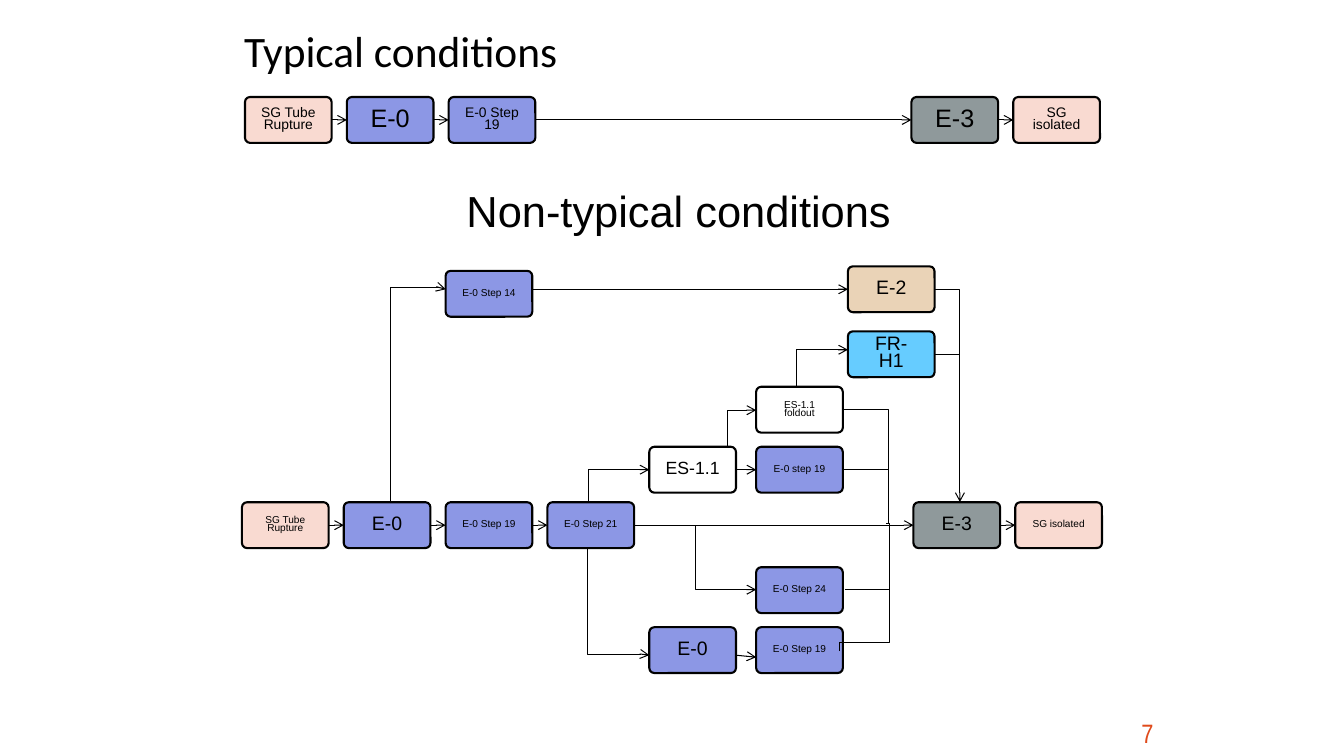
import itertools
from dataclasses import dataclass
from typing import NamedTuple

import lxml.etree
import pptx
import pptx.dml.color
import pptx.enum.shapes
import pptx.enum.text
import pptx.oxml.ns
import pptx.util

COLS, ROWS = 133.3, 75
CELL = pptx.util.Inches(0.1)
BOX_W, BOX_H, PITCH = 8.6, 4.55, 10.1
TYPICAL_X, START_X, BRANCH_X, STEP_X, EXIT_X, END_X = 24.3, 24, 64.4, 75, 84.1, 90.6
TYPICAL_Y, ESCAPE_Y, MAIN_Y = 11.9, 28.7, 52.1
LEFT, RIGHT = 1, 3
BLACK, WHITE, BLUE, PINK, GREY = "000000", "FFFFFF", "8C97E5", "F9DAD1", "8F999B"
SMALL, LARGE = 7.2, 13.9
ALIGN = pptx.enum.text.PP_ALIGN
ANCHOR = pptx.enum.text.MSO_ANCHOR
KIND = pptx.enum.shapes.MSO_CONNECTOR
qn = pptx.oxml.ns.qn


@dataclass(frozen=True)
class Box:
    key: str
    text: str
    col: float
    mid_row: float
    fill: str = BLUE
    size: float = SMALL
    inset: float = 1.35
    spacing: float = 0.7


class Point(NamedTuple):
    col: float
    row: float


class Port(NamedTuple):
    key: str
    side: int


@dataclass(frozen=True)
class Line:
    start: Point | Port
    end: Point | Port
    arrow: bool = True


@dataclass(frozen=True)
class Elbow:
    start: Point
    end: Point
    bends: tuple
    upright: bool = False
    arrow: bool = True


BOXES = [
    Box("typical rupture", "SG Tube Rupture", TYPICAL_X, TYPICAL_Y, PINK, 9.9, 1),
    Box("typical E-0", "E-0", TYPICAL_X + PITCH, TYPICAL_Y, BLUE, 18, 1, 0.8),
    Box("typical step 19", "E-0 Step 19", TYPICAL_X + 2 * PITCH, TYPICAL_Y, BLUE, 9.9, 1),
    Box("typical E-3", "E-3", 90.4, TYPICAL_Y, GREY, 18, 1, 0.8),
    Box("typical isolated", "SG isolated", 90.4 + PITCH, TYPICAL_Y, PINK, 9.9, 1),
    Box("rupture", "SG Tube Rupture", START_X, MAIN_Y, PINK),
    Box("E-0", "E-0", START_X + PITCH, MAIN_Y, size=LARGE),
    Box("step 19", "E-0 Step 19", START_X + 2 * PITCH, MAIN_Y),
    Box("step 21", "E-0 Step 21", START_X + 3 * PITCH, MAIN_Y),
    Box("E-3", "E-3", END_X, MAIN_Y, GREY, LARGE),
    Box("isolated", "SG isolated", END_X + PITCH, MAIN_Y, PINK),
    Box("step 14", "E-0 Step 14", START_X + 2 * PITCH, 29.15),
    Box("E-2", "E-2", EXIT_X, ESCAPE_Y, "EAD3B7", LARGE),
    Box("FR-H1", "FR-H1", EXIT_X, 35.15, "66CCFF", LARGE),
    Box("foldout", "ES-1.1 foldout", STEP_X, 40.65, WHITE),
    Box("ES-1.1", "ES-1.1", BRANCH_X, 46.6, WHITE, 12.6),
    Box("ES step 19", "E-0 step 19", STEP_X, 46.6),
    Box("step 24", "E-0 Step 24", STEP_X, 58.55),
    Box("lower E-0", "E-0", BRANCH_X, 64.5, size=LARGE),
    Box("lower step 19", "E-0 Step 19", STEP_X, 64.5),
]

CHAINS = [
    ("typical rupture", "typical E-0", "typical step 19", "typical E-3", "typical isolated"),
    ("rupture", "E-0", "step 19", "step 21", "E-3", "isolated"),
    ("ES-1.1", "ES step 19"),
]

LINES = [
    Line(Point(52.8, ESCAPE_Y), Port("E-2", LEFT)),
    Line(Port("FR-H1", RIGHT), Point(95.2, 35.15), False),
    Line(Port("ES step 19", RIGHT), Point(88.1, 46.6), False),
    Line(Point(83.8, 58.5), Point(88.3, 58.5), False),
    Line(Point(73, 65), Point(75, 65.2)),
]

ELBOWS = [
    Elbow(Point(58.3, 49.8), Point(64.4, 46.6), (0.01,)),
    Elbow(Point(69.4, 44.3), Point(75, 40.7), (0.5,)),
    Elbow(Point(79, 38.4), Point(84.1, 34.7), (0,)),
    Elbow(Point(62.9, 52.1), Point(75, 58.5), (0.5,)),
    Elbow(Point(58.3, 54.4), Point(64.4, 65), (0.99,), True),
    Elbow(Point(38.7, 49.8), Point(44.2, 28.7), (1.01,), True),
    Elbow(Point(92.7, 28.7), Point(95.2, 49.8), (0,), True),
    Elbow(Point(83.6, 40.7), Point(87.9, 51.9), (-0.01, 1.05), True, False),
    Elbow(Point(83.3, 64.6), Point(87.9, 51.9), (0.07, 1.07), True, False),
]


def grid(cells: float) -> int:
    return round(cells * CELL)


def color(value: str) -> pptx.dml.color.RGBColor:
    return pptx.dml.color.RGBColor.from_string(value)


def write(sp, text: str, *, size: float, font: str = "Arial", fill: str = BLACK,
          align=ALIGN.LEFT, anchor=ANCHOR.MIDDLE, inset: float = 0,
          spacing: float = 1, after: float = 0) -> None:
    tf = sp.text_frame
    tf.word_wrap = True
    tf.auto_size = pptx.enum.text.MSO_AUTO_SIZE.NONE
    tf.vertical_anchor = anchor
    tf.margin_left = tf.margin_right = tf.margin_top = tf.margin_bottom = grid(inset)
    p = tf.paragraphs[0]
    p.alignment = align
    p.line_spacing = spacing
    p.space_before = pptx.util.Pt(0)
    p.space_after = pptx.util.Pt(size * after)
    r = p.add_run()
    r.text = text
    r.font.name = font
    r.font.size = pptx.util.Pt(size)
    r.font.color.rgb = color(fill)


def draw_box(s, box: Box):
    sp = s.shapes.add_shape(pptx.enum.shapes.MSO_SHAPE.ROUNDED_RECTANGLE, grid(box.col),
                            grid(box.mid_row - BOX_H / 2), grid(BOX_W), grid(BOX_H))
    sp.adjustments[0] = 0.11
    sp.shadow.inherit = False
    sp.fill.solid()
    sp.fill.fore_color.rgb = color(box.fill)
    sp.line.color.rgb = color(BLACK)
    sp.line.width = pptx.util.Pt(1.5)
    write(sp, box.text, size=box.size, align=ALIGN.CENTER, inset=box.inset,
          spacing=box.spacing, after=0.35)
    return sp


def locate(stop: Point | Port, shapes: dict) -> tuple[int, int]:
    if isinstance(stop, Point):
        return grid(stop.col), grid(stop.row)
    sp = shapes[stop.key]
    return sp.left + (sp.width if stop.side == RIGHT else 0), sp.top + sp.height // 2


def style_line(cxn, arrow: bool) -> None:
    cxn.line.color.rgb = color(BLACK)
    cxn.line.width = pptx.util.Pt(0.75)
    spPr = cxn.element.spPr
    if arrow:
        lxml.etree.SubElement(spPr.find(qn("a:ln")), qn("a:tailEnd"), type="arrow")
    lxml.etree.SubElement(spPr, qn("a:effectLst"))


def draw_line(s, shapes: dict, line: Line) -> None:
    cxn = s.shapes.add_connector(KIND.STRAIGHT, *locate(line.start, shapes),
                                 *locate(line.end, shapes))
    if isinstance(line.start, Port):
        cxn.begin_connect(shapes[line.start.key], line.start.side)
    if isinstance(line.end, Port):
        cxn.end_connect(shapes[line.end.key], line.end.side)
    style_line(cxn, line.arrow)


def turn(start: Point, end: Point) -> tuple[Point, Point]:
    mid_col, mid_row = (start.col + end.col) / 2, (start.row + end.row) / 2
    half_w, half_h = abs(end.row - start.row) / 2, (end.col - start.col) / 2
    if end.row < start.row:
        half_h = -half_h
    return Point(mid_col + half_w, mid_row - half_h), Point(mid_col - half_w, mid_row + half_h)


def draw_elbow(s, elbow: Elbow) -> None:
    start, end = turn(elbow.start, elbow.end) if elbow.upright else (elbow.start, elbow.end)
    cxn = s.shapes.add_connector(KIND.ELBOW, *map(grid, start + end))
    style_line(cxn, elbow.arrow)
    spPr = cxn.element.spPr
    if elbow.upright:
        degrees = 270 if elbow.end.row > elbow.start.row else 90
        spPr.find(qn("a:xfrm")).set("rot", str(degrees * 60000))
    geometry = spPr.find(qn("a:prstGeom"))
    geometry.set("prst", f"bentConnector{len(elbow.bends) + 2}")
    for i, bend in enumerate(elbow.bends, 1):
        lxml.etree.SubElement(geometry.find(qn("a:avLst")), qn("a:gd"), name=f"adj{i}",
                              fmla=f"val {round(bend * 100000)}")


def main() -> None:
    prs = pptx.Presentation()
    prs.slide_width, prs.slide_height = grid(COLS), grid(ROWS)
    s = prs.slides.add_slide(prs.slide_layouts[5])
    title = s.shapes.title
    title.left, title.top, title.width, title.height = map(grid, (24.2, 0.9, 85, 6.7))
    write(title, "Typical conditions", size=31, font="Calibri", anchor=ANCHOR.BOTTOM)
    heading = s.shapes.add_textbox(*map(grid, (24.8, 17.5, 85, 6.7)))
    write(heading, "Non-typical conditions", size=31, align=ALIGN.CENTER, inset=0.6)
    number = s.shapes.add_textbox(*map(grid, (113.2, 71.3, 2.5, 2.8)))
    write(number, "7", size=19, font="Arial Narrow", fill="E04A1B")
    shapes = {box.key: draw_box(s, box) for box in BOXES}
    links = [Line(Port(a, RIGHT), Port(b, LEFT))
             for chain in CHAINS for a, b in itertools.pairwise(chain)]
    for line in links + LINES:
        draw_line(s, shapes, line)
    for elbow in ELBOWS:
        draw_elbow(s, elbow)
    prs.save("out.pptx")


if __name__ == "__main__":
    main()
